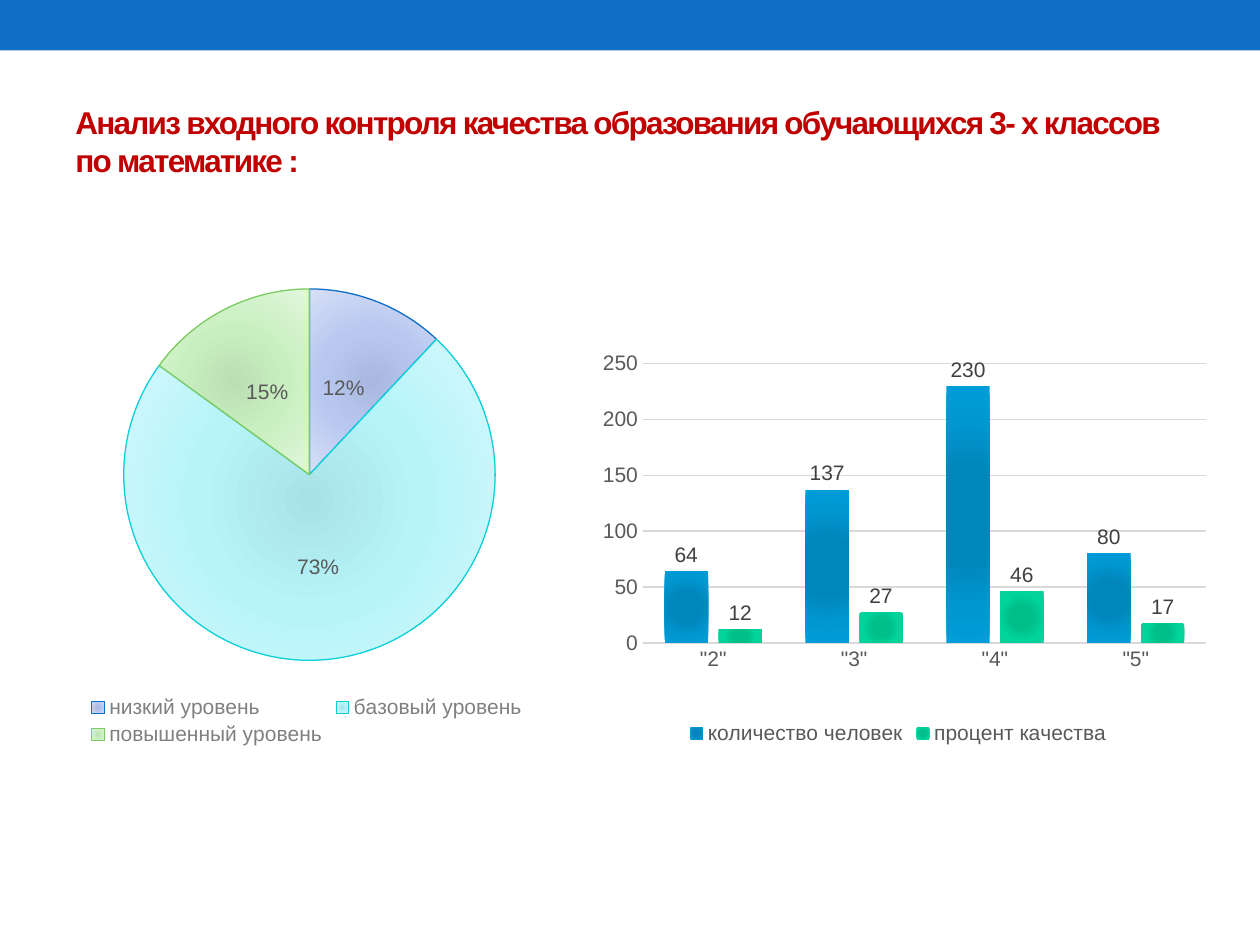
"""Builds a slide on entry test results in maths: a pie of levels and columns of marks."""
from lxml.etree import SubElement
from pptx import Presentation
from pptx.chart.data import CategoryChartData
from pptx.dml.color import RGBColor
from pptx.enum.chart import XL_CHART_TYPE, XL_LABEL_POSITION, XL_LEGEND_POSITION, XL_TICK_MARK
from pptx.enum.shapes import MSO_SHAPE
from pptx.enum.text import MSO_ANCHOR
from pptx.oxml import parse_xml
from pptx.oxml.ns import nsdecls, qn
from pptx.util import Pt

BLUE = RGBColor(0x0F, 0x6F, 0xC6)
CYAN = RGBColor(0x0B, 0xD0, 0xD9)
GREEN = RGBColor(0x7C, 0xCA, 0x62)
RED = RGBColor(0xC0, 0x00, 0x00)
BLACK = RGBColor(0x00, 0x00, 0x00)
DARK = RGBColor(0x40, 0x40, 0x40)
GREY = RGBColor(0x59, 0x59, 0x59)
SOFT = RGBColor(0x80, 0x80, 0x80)
PALE = RGBColor(0xD9, 0xD9, 0xD9)

SLICES = [
    ("низкий уровень", 12, BLUE, [(0, "A9B8DE"), (45, "B7C7EF"), (100, "D7E0F7")]),
    ("базовый уровень", 73, CYAN, [(0, "A8E2E7"), (45, "B5F4F9"), (100, "D6F9FC")]),
    ("повышенный уровень", 15, GREEN, [(0, "BBDEB3"), (45, "C9EFC0"), (100, "E1F7DC")]),
]
MARKS = ['"2"', '"3"', '"4"', '"5"']
COUNTS = [
    ("количество человек", (64, 137, 230, 80),
     [(0, "0086BA"), (34, "0086BA"), (70, "0096CF"), (100, "009DD9")]),
    ("процент качества", (12, 27, 46, 17),
     [(0, "00BF8B"), (34, "00BF8B"), (70, "00D59B"), (100, "10CF9B")]),
]


class Deck:
    def __init__(self, wide, high, face):
        self.show = Presentation()
        self.show.slide_width, self.show.slide_height = Pt(wide), Pt(high)
        self.slide = self.show.slides.add_slide(self.show.slide_layouts[6])
        self.face = face

    def style(self, font, size, color, bold=False):
        font.name, font.size, font.bold = self.face, Pt(size), bold
        font.color.rgb = color

    def band(self, box, color):
        shape = self.slide.shapes.add_shape(MSO_SHAPE.RECTANGLE, *map(Pt, box))
        shape.shadow.inherit = False
        shape.fill.solid()
        shape.fill.fore_color.rgb = color
        shape.line.fill.background()

    def title(self, box, text, size, color):
        frame = self.slide.shapes.add_textbox(*map(Pt, box)).text_frame
        frame.word_wrap = True
        frame.vertical_anchor = MSO_ANCHOR.MIDDLE
        line = frame.paragraphs[0]
        run = line.add_run()
        run.text = text
        self.style(line.font, size, color, True)
        run.font._element.set("spc", "-100")

    def glow(self, form, root, stops):
        form.fill.gradient()
        old = list(root.iter(qn("a:gradFill")))[-1]
        marks = "".join(
            f'<a:gs pos="{pos * 1000}"><a:srgbClr val="{code}"/></a:gs>' for pos, code in stops)
        new = parse_xml(
            f'<a:gradFill {nsdecls("a")} rotWithShape="1"><a:gsLst>{marks}</a:gsLst>'
            '<a:path path="circle"><a:fillToRect l="100000" t="100000" r="100000" b="100000"/>'
            '</a:path></a:gradFill>')
        old.getparent().replace(old, new)

    def place(self, chart, area):
        plot = chart._chartSpace.find(".//" + qn("c:plotArea"))
        for old in plot.findall(qn("c:layout")):
            plot.remove(old)
        frame = parse_xml(f'<c:layout {nsdecls("c")}><c:manualLayout/></c:layout>')
        plot.insert(0, frame)
        keys = ["layoutTarget", "xMode", "yMode", "x", "y", "w", "h"]
        for key, val in zip(keys, ["inner", "edge", "edge", *area]):
            SubElement(frame[0], qn("c:" + key)).set("val", str(val))

    def chart(self, kind, box, area, names, rows, tint):
        data = CategoryChartData()
        data.categories = names
        for name, vals in rows:
            data.add_series(name, vals)
        chart = self.slide.shapes.add_chart(kind, *map(Pt, box), data).chart
        self.style(chart.font, 10, BLACK)
        chart.has_title = False
        chart.has_legend = True
        chart.legend.position = XL_LEGEND_POSITION.BOTTOM
        chart.legend.include_in_layout = False
        self.style(chart.legend.font, 12, tint)
        self.place(chart, area)
        return chart

    def labels(self, plot, spot, color):
        plot.has_data_labels = True
        tags = plot.data_labels
        tags.position = spot
        self.style(tags.font, 12, color)
        return tags

    def columns(self, box, area, names, rows):
        chart = self.chart(XL_CHART_TYPE.COLUMN_CLUSTERED, box, area, names,
                           [row[:2] for row in rows], GREY)
        plot = chart.plots[0]
        plot.gap_width, plot.overlap, plot.vary_by_categories = 100, -24, False
        self.labels(plot, XL_LABEL_POSITION.OUTSIDE_END, DARK).show_value = True
        for item, row in zip(plot.series, rows):
            item.invert_if_negative = False
            self.glow(item.format, item._element, row[2])
        base, side = chart.category_axis, chart.value_axis
        for axis in (base, side):
            axis.major_tick_mark = axis.minor_tick_mark = XL_TICK_MARK.NONE
            self.style(axis.tick_labels.font, 12, GREY)
        base.format.line.color.rgb = PALE
        base.format.line.width = Pt(1)
        side.format.line.fill.background()
        side.minimum_scale, side.maximum_scale, side.major_unit = 0, 250, 50
        grid = side.major_gridlines.format.line
        grid.color.rgb, grid.width = PALE, Pt(0.75)

    def pie(self, box, area, rows):
        chart = self.chart(XL_CHART_TYPE.PIE, box, area, [row[0] for row in rows],
                           [("Series 1", [row[1] for row in rows])], SOFT)
        plot = chart.plots[0]
        plot.vary_by_categories = True
        tags = self.labels(plot, XL_LABEL_POSITION.CENTER, GREY)
        tags.show_value, tags.show_percentage = False, True
        tags.number_format, tags.number_format_is_linked = "0%", False
        item = plot.series[0]
        for spot, (_, _, edge, stops) in enumerate(rows):
            form = item.points[spot].format
            self.glow(form, item._element, stops)
            form.line.color.rgb, form.line.width = edge, Pt(0.75)


def main():
    deck = Deck(720, 540, "Arial")
    deck.band((0, 0, 720, 28.8), BLUE)
    deck.title((36, 41.76, 648, 77.76),
               "Анализ входного контроля качества образования обучающихся 3- х классов по математике :",
               18, RED)
    deck.columns((326.16, 193.68, 374.4, 234.72), (0.11, 0.06, 0.86, 0.68), MARKS, COUNTS)
    deck.pie((25.2, 156.96, 300.24, 272.16), (0.15, 0.03, 0.71, 0.78), SLICES)
    deck.show.save("out.pptx")


if __name__ == "__main__":
    main()
